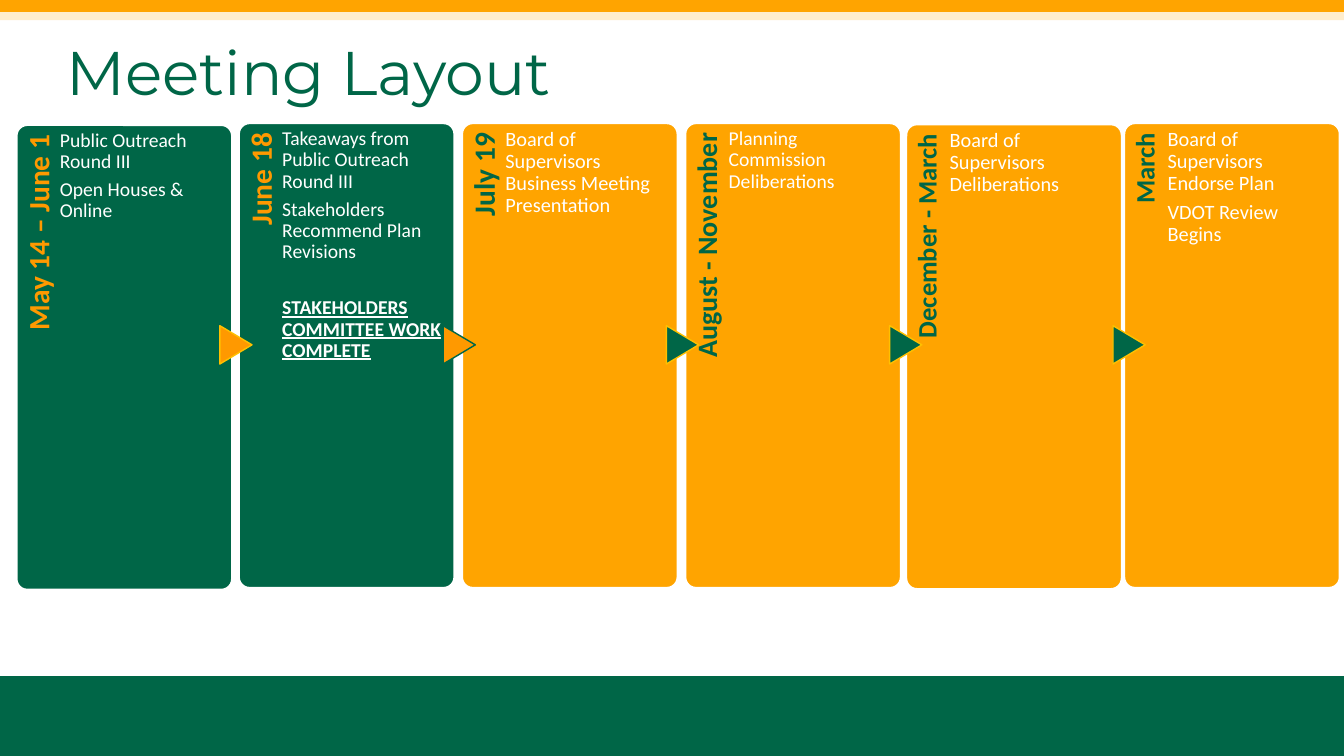
from dataclasses import dataclass
from typing import Optional

from pptx import Presentation
from pptx.dml.color import RGBColor
from pptx.enum.shapes import MSO_SHAPE as Preset
from pptx.enum.text import MSO_ANCHOR as Anchor, PP_ALIGN as Align
from pptx.shapes.autoshape import Shape
from pptx.slide import Slide
from pptx.text.text import TextFrame, _Paragraph as Paragraph
from pptx.util import Pt

COLORS = {
    "green": "006647",
    "amber": "FFA400",
    "cream": "FFEDCC",
    "orange": "FF9900",
    "gold": "FFC000",
    "white": "FFFFFF",
}
PAGE_WIDTH, PAGE_HEIGHT = 960, 540
CARD_WIDTH, CARD_HEIGHT = 154, 332
LABEL_LENGTH, LABEL_DEPTH = 272, 31
BODY_INDENT, BODY_WIDTH = 31, 114.5
ARROW_BASE, ARROW_DEPTH = 27.4, 23
ARROW_CENTER_X, ARROW_CENTER_Y, ARROW_PITCH = 168.5, 246.3, 159.5
SPACING_RATIO = 0.35


@dataclass(frozen=True)
class Bar:
    top: float
    height: float
    color: str


@dataclass(frozen=True)
class Entry:
    text: str
    emphasis: bool = False
    space_before: float = 0


@dataclass(frozen=True)
class Arrow:
    fill: str
    line: str


@dataclass(frozen=True)
class Meeting:
    date: str
    entries: tuple[Entry, ...]
    left: float
    top: float
    fill: str
    date_color: str
    date_size: float
    body_size: float
    arrow: Optional[Arrow] = None


BARS = [
    Bar(0, 14.4, "cream"),
    Bar(483, 57, "green"),
    Bar(0, 8.6, "amber"),
]
MEETINGS = [
    Meeting("May 14 – June 1",
            (Entry("Public Outreach Round III"), Entry("Open Houses & Online")),
            11.8, 89.3, "green", "orange", 21, 14),
    Meeting("June 18",
            (Entry("Takeaways from Public Outreach Round III"),
             Entry("Stakeholders Recommend Plan Revisions"),
             Entry("STAKEHOLDERS COMMITTEE WORK COMPLETE", True, 20.3)),
            170.6, 88, "green", "orange", 21, 14, Arrow("orange", "gold")),
    Meeting("July 19",
            (Entry("Board of Supervisors Business Meeting Presentation"),),
            330, 88, "amber", "green", 21, 14.5, Arrow("orange", "green")),
    Meeting("August - November",
            (Entry("Planning Commission Deliberations"),),
            489.5, 88, "amber", "green", 20, 14, Arrow("green", "gold")),
    Meeting("December - March",
            (Entry("Board of Supervisors Deliberations"),),
            647.3, 88.8, "amber", "green", 19, 14.5, Arrow("green", "gold")),
    Meeting("March",
            (Entry("Board of Supervisors Endorse Plan"), Entry("VDOT Review Begins")),
            803, 88, "amber", "green", 19, 14.5, Arrow("green", "gold")),
]


def rgb(name: str) -> RGBColor:
    return RGBColor.from_string(COLORS[name])


def add_block(page: Slide, preset: Preset, left: float, top: float, width: float,
              height: float, fill: str, line: Optional[str] = None,
              line_width: float = 1) -> Shape:
    block = page.shapes.add_shape(preset, Pt(left), Pt(top), Pt(width), Pt(height))
    block.shadow.inherit = False
    block.fill.solid()
    block.fill.fore_color.rgb = rgb(fill)
    if line:
        block.line.color.rgb = rgb(line)
        block.line.width = Pt(line_width)
    else:
        block.line.fill.background()
    return block


def add_text_box(page: Slide, left: float, top: float, width: float, height: float,
                 inset_top: float = 0, inset_right: float = 0) -> Shape:
    box = page.shapes.add_textbox(Pt(left), Pt(top), Pt(width), Pt(height))
    frame: TextFrame = box.text_frame
    frame.word_wrap = True
    frame.margin_left = frame.margin_bottom = 0
    frame.margin_top, frame.margin_right = Pt(inset_top), Pt(inset_right)
    return box


def write(para: Paragraph, text: str, size: float, color: str, font: str = "Calibri",
          bold: bool = False, underline: bool = False) -> None:
    para.line_spacing = 0.9
    span = para.add_run()
    span.text = text
    span.font.name = font
    span.font.size = Pt(size)
    span.font.color.rgb = rgb(color)
    span.font.bold = bold
    span.font.underline = underline


def add_title(page: Slide, text: str) -> None:
    box = add_text_box(page, 47.5, 15, 828, 78.5)
    box.text_frame.vertical_anchor = Anchor.MIDDLE
    write(box.text_frame.paragraphs[0], text, 44, "green", "Montserrat")


def add_date(page: Slide, meeting: Meeting) -> None:
    """Place the date so that, once turned, it runs up the card's left edge."""
    left = meeting.left + (LABEL_DEPTH - LABEL_LENGTH) / 2
    top = meeting.top + (LABEL_LENGTH - LABEL_DEPTH) / 2
    box = add_text_box(page, left, top, LABEL_LENGTH, LABEL_DEPTH, 5.4, 7)
    box.rotation = 270
    para = box.text_frame.paragraphs[0]
    para.alignment = Align.RIGHT
    write(para, meeting.date, meeting.date_size, meeting.date_color, bold=True)


def add_arrow(page: Slide, arrow: Arrow, gap: int) -> None:
    """Place an arrow over the gap before the card with that index."""
    center = ARROW_CENTER_X + (gap - 1) * ARROW_PITCH
    triangle = add_block(page, Preset.FLOWCHART_EXTRACT, center - ARROW_BASE / 2,
                         ARROW_CENTER_Y - ARROW_DEPTH / 2, ARROW_BASE, ARROW_DEPTH,
                         arrow.fill, arrow.line)
    triangle.rotation = 90


def add_entries(page: Slide, meeting: Meeting) -> None:
    box = add_text_box(page, meeting.left + BODY_INDENT, meeting.top,
                       BODY_WIDTH, CARD_HEIGHT, 4)
    frame = box.text_frame
    for index, entry in enumerate(meeting.entries):
        para = frame.add_paragraph() if index else frame.paragraphs[0]
        para.space_after = Pt(round(meeting.body_size * SPACING_RATIO, 1))
        if entry.space_before:
            para.space_before = Pt(entry.space_before)
        write(para, entry.text, meeting.body_size, "white",
              bold=entry.emphasis, underline=entry.emphasis)


def add_meeting(page: Slide, meeting: Meeting, index: int) -> None:
    card = add_block(page, Preset.ROUNDED_RECTANGLE, meeting.left, meeting.top,
                     CARD_WIDTH, CARD_HEIGHT, meeting.fill, "white", 1.5)
    card.adjustments[0] = 0.05
    add_date(page, meeting)
    if meeting.arrow:
        add_arrow(page, meeting.arrow, index)
    add_entries(page, meeting)


def main() -> None:
    deck = Presentation()
    deck.slide_width, deck.slide_height = Pt(PAGE_WIDTH), Pt(PAGE_HEIGHT)
    page = deck.slides.add_slide(deck.slide_layouts[6])
    for bar in BARS:
        add_block(page, Preset.RECTANGLE, 0, bar.top, PAGE_WIDTH, bar.height, bar.color)
    add_title(page, "Meeting Layout")
    for index, meeting in enumerate(MEETINGS):
        add_meeting(page, meeting, index)
    deck.save("out.pptx")


if __name__ == "__main__":
    main()
